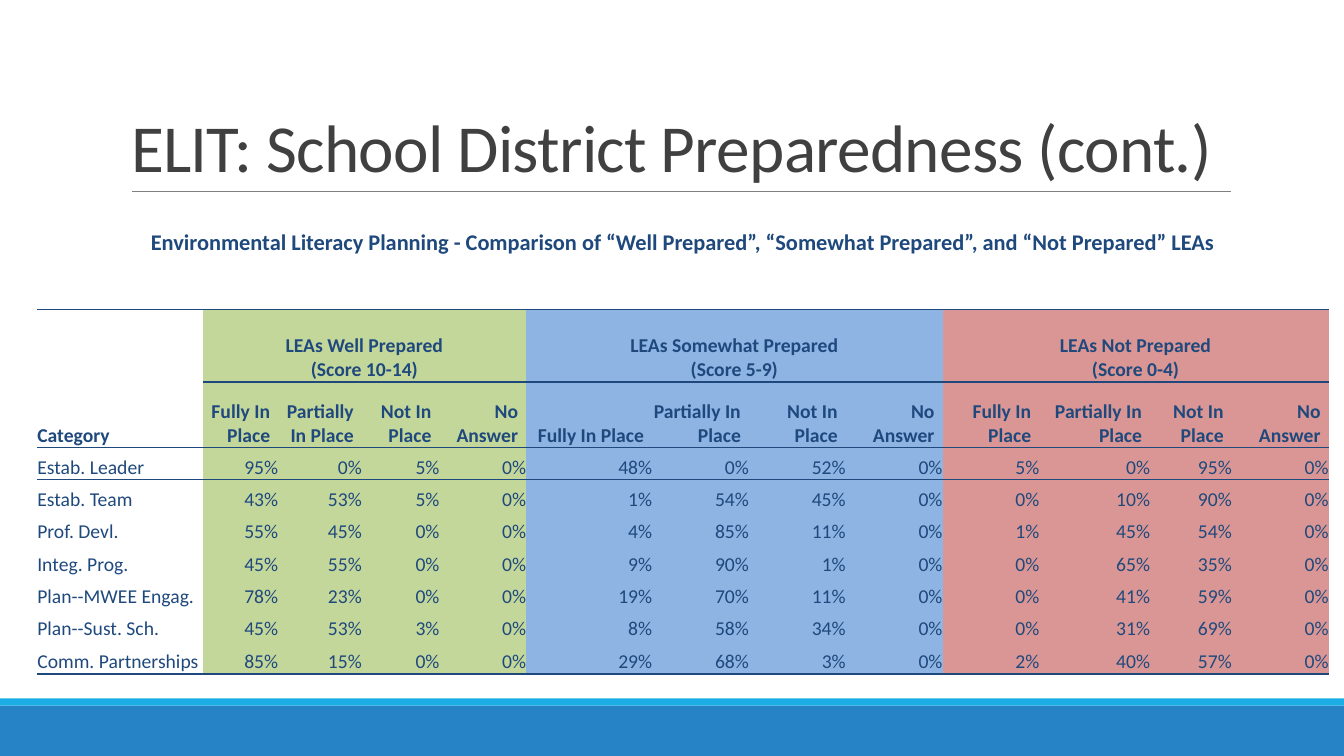
import copy
import pptx
import pptx.util
import pptx.dml.color
import pptx.enum.shapes
import pptx.enum.text
import pptx.oxml
import pptx.oxml.ns
from dataclasses import dataclass

# Content
HEADLINE = "ELIT: School District Preparedness (cont.)"
CAPTION = ("Environmental Literacy Planning - Comparison of “Well Prepared”, "
           "“Somewhat Prepared”, and “Not Prepared” LEAs")
CORNER = "Category"
ANSWERS = ["Fully In Place", "Partially In Place", "Not In Place", "No Answer"]
# Group heading, score line, fill, and (first column, span) for each answer
GROUPS = [
    ("LEAs Well Prepared", "(Score 10-14)", "C4D79B", [(1, 2), (3, 1), (4, 1), (5, 2)]),
    ("LEAs Somewhat Prepared", "(Score 5-9)", "8DB4E2", [(7, 1), (8, 1), (9, 1), (10, 1)]),
    ("LEAs Not Prepared", "(Score 0-4)", "DA9694", [(11, 1), (12, 2), (14, 1), (15, 1)]),
]
PERCENTAGES = [
    ("Estab. Leader", [95, 0, 5, 0], [48, 0, 52, 0], [5, 0, 95, 0]),
    ("Estab. Team", [43, 53, 5, 0], [1, 54, 45, 0], [0, 10, 90, 0]),
    ("Prof. Devl.", [55, 45, 0, 0], [4, 85, 11, 0], [1, 45, 54, 0]),
    ("Integ. Prog.", [45, 55, 0, 0], [9, 90, 1, 0], [0, 65, 35, 0]),
    ("Plan--MWEE Engag.", [78, 23, 0, 0], [19, 70, 11, 0], [0, 41, 59, 0]),
    ("Plan--Sust. Sch.", [45, 53, 3, 0], [8, 58, 34, 0], [0, 31, 69, 0]),
    ("Comm. Partnerships", [85, 15, 0, 0], [29, 68, 3, 0], [2, 40, 57, 0]),
]

# Grid, in inches
WIDTH, HEIGHT = 13.33, 7.5
COLUMNS = [1.64, 0.63, 0.12, 0.83, 0.77, 0.19, 0.67, 1.25] + [0.96] * 5 + [0.14, 0.81, 0.96]
ROWS = [0.67, 0.33, 0.72, 0.65] + [0.32] * 6 + [0.33]
CAPTION_ROW, SPACER_ROW, GROUP_ROW, ANSWER_ROW, FIRST_ROW = range(5)
LAST_ROW, LAST_COLUMN = len(ROWS) - 1, len(COLUMNS) - 1
SPACER_SPANS = [(2, 2), (4, 2), (13, 2)]
RULES = {SPACER_ROW: "lnB", GROUP_ROW: "lnT", ANSWER_ROW: "lnB",
         FIRST_ROW: "lnT", LAST_ROW: "lnB"}


@dataclass
class Theme:
    font: str = "Calibri"
    headline: str = "404040"
    ink: str = "1F497D"
    rule: str = "808080"
    footer: str = "2683C6"
    stripe: str = "1CADE4"
    headline_size: int = 48
    caption_size: int = 16
    cell_size: int = 14
    no_grid: str = "{2D5ABB26-0587-4C30-8999-92F81FD0307C}"


theme = Theme()
inch = pptx.util.Inches
rgb = pptx.dml.color.RGBColor.from_string
qn = pptx.oxml.ns.qn
Anchor = pptx.enum.text.MSO_ANCHOR
Align = pptx.enum.text.PP_ALIGN


def style(paragraph, size, color, bold=False):
    for run in paragraph.runs:
        run.font.name, run.font.size, run.font.bold = theme.font, pptx.util.Pt(size), bold
        run.font.color.rgb = rgb(color)
    for line_break in paragraph._p.findall(qn("a:br")):
        line_break.insert(0, copy.deepcopy(paragraph.runs[0]._r.rPr))


def write(row, column, text, align=Align.RIGHT, bold=False, size=theme.cell_size,
          span=1, depth=1, fill=None, inset=0, anchor=Anchor.BOTTOM):
    cell = grid.cell(row, column)
    if span > 1 or depth > 1:
        cell.merge(grid.cell(row + depth - 1, column + span - 1))
    cell.vertical_anchor, cell.margin_right = anchor, inch(inset)
    paragraph = cell.text_frame.paragraphs[0]
    paragraph.text, paragraph.alignment = text, align
    style(paragraph, size, theme.ink, bold)
    if fill:
        cell.fill.solid()
        cell.fill.fore_color.rgb = rgb(fill)


def draw_rule(cell, edge, position=0):
    cell._tc.get_or_add_tcPr().insert(position, pptx.oxml.parse_xml(
        f'<a:{edge} {pptx.oxml.ns.nsdecls("a")} w="12700"><a:solidFill>'
        f'<a:srgbClr val="{theme.ink}"/></a:solidFill></a:{edge}>'))


deck = pptx.Presentation()
deck.slide_width, deck.slide_height = inch(WIDTH), inch(HEIGHT)
slide = deck.slides.add_slide(deck.slide_layouts[5])

# Footer bands
for top, height, color in [(7, 0.5, theme.footer), (6.93, 0.07, theme.stripe)]:
    band = slide.shapes.add_shape(pptx.enum.shapes.MSO_SHAPE.RECTANGLE,
                                  0, inch(top), inch(WIDTH), inch(height))
    band.shadow.inherit = False
    band.fill.solid()
    band.fill.fore_color.rgb = rgb(color)
    band.line.fill.background()

# Headline and the rule under it
underline = slide.shapes.add_connector(pptx.enum.shapes.MSO_CONNECTOR.STRAIGHT,
                                       inch(1.31), inch(1.9), inch(12.21), inch(1.9))
underline.line.color.rgb, underline.line.width = rgb(theme.rule), pptx.util.Pt(0.5)
underline._element.spPr.append(pptx.oxml.parse_xml(
    f'<a:effectLst {pptx.oxml.ns.nsdecls("a")}/>'))

headline = slide.shapes.title
headline.left, headline.top, headline.width, headline.height = map(inch, (1.2, 0.31, 11, 1.59))
headline.text_frame.text = HEADLINE
headline.text_frame.auto_size = pptx.enum.text.MSO_AUTO_SIZE.NONE
headline.text_frame.vertical_anchor = Anchor.BOTTOM
headline_line = headline.text_frame.paragraphs[0]
headline_line.alignment, headline_line.line_spacing = Align.LEFT, 0.85
style(headline_line, theme.headline_size, theme.headline)
headline_line.runs[0]._r.rPr.set("spc", "-50")

# Empty table grid
table_frame = slide.shapes.add_table(len(ROWS), len(COLUMNS), inch(0.37), inch(2.07),
                                     inch(sum(COLUMNS)), inch(sum(ROWS)))
grid = table_frame.table
grid.first_row = grid.horz_banding = False
grid._tbl.tblPr.find(qn("a:tableStyleId")).text = theme.no_grid
for column, width in zip(grid.columns, COLUMNS):
    column.width = inch(width)
for row, height in zip(grid.rows, ROWS):
    row.height = inch(height)
for cell in grid.iter_cells():
    cell.margin_left = cell.margin_right = cell.margin_top = cell.margin_bottom = 0
    cell.fill.background()

# Caption, spacer row and category column
write(CAPTION_ROW, 0, CAPTION, Align.CENTER, True, theme.caption_size,
      span=len(COLUMNS), anchor=Anchor.MIDDLE)
for column, span in SPACER_SPANS:
    write(SPACER_ROW, column, "", span=span)
write(GROUP_ROW, 0, CORNER, Align.LEFT, True, depth=2)
for row, (category, *_) in enumerate(PERCENTAGES, FIRST_ROW):
    write(row, 0, category, Align.LEFT)

# Preparedness groups
for group, (name, score, fill, places) in enumerate(GROUPS, 1):
    write(GROUP_ROW, places[0][0], f"{name}\n{score}", Align.CENTER, True,
          span=sum(span for _, span in places), fill=fill)
    for answer, (column, span) in enumerate(places):
        write(ANSWER_ROW, column, ANSWERS[answer], bold=True, span=span, fill=fill, inset=0.08)
        for row, record in enumerate(PERCENTAGES, FIRST_ROW):
            write(row, column, f"{record[group][answer]}%", span=span, fill=fill)

# Horizontal rules
for row, edge in RULES.items():
    for column in range(len(COLUMNS)):
        draw_rule(grid.cell(row, column), edge)
draw_rule(grid.cell(GROUP_ROW, 0), "lnB", 1)

deck.save("out.pptx")
